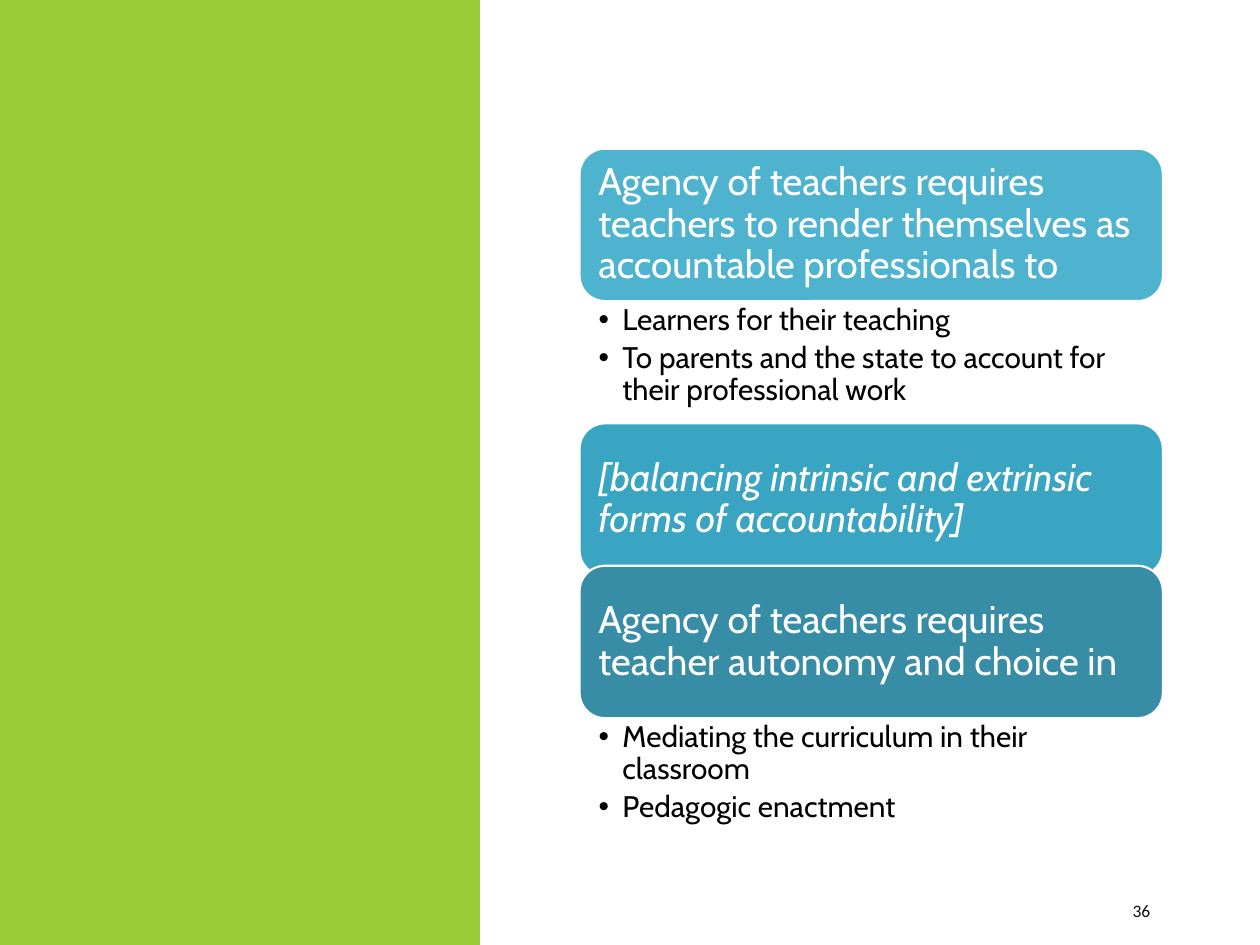
from lxml.etree import SubElement
from pptx import Presentation
from pptx.dml.color import RGBColor
from pptx.enum.shapes import MSO_SHAPE
from pptx.enum.text import MSO_ANCHOR, MSO_AUTO_SIZE, PP_ALIGN
from pptx.oxml.ns import qn
from pptx.util import Inches, Pt

GREEN = RGBColor(0x99, 0xCB, 0x38)
LIGHT_TEAL = RGBColor(0x4E, 0xB3, 0xCF)
TEAL = RGBColor(0x3A, 0xA4, 0xC3)
DARK_TEAL = RGBColor(0x37, 0x8D, 0xA6)
WHITE = RGBColor(0xFF, 0xFF, 0xFF)
BLACK = RGBColor(0, 0, 0)
NEAR_BLACK = RGBColor(0x0D, 0x0D, 0x0D)

SECTIONS = [
    {"top": 1.18, "fill": LIGHT_TEAL, "italic": None, "list_height": 0.82,
     "heading": "Agency of teachers requires teachers to render themselves as accountable professionals to",
     "points": ["Learners for their teaching",
                "To parents and the state to account for their professional work"]},
    {"top": 3.36, "fill": TEAL, "italic": True,
     "heading": "[balancing intrinsic and extrinsic forms of accountability]",
     "points": []},
    {"top": 4.49, "fill": DARK_TEAL, "italic": None, "list_height": 0.59,
     "heading": "Agency of teachers requires teacher autonomy and choice in",
     "points": ["Mediating the curriculum in their classroom", "Pedagogic enactment"]},
]
PAGE_NUMBER = "36"
LEFT, WIDTH, HEADING_HEIGHT = 4.6, 4.63, 1.21
INDENT = 0.19

HEADING_FRAME = {"word_wrap": True, "vertical_anchor": MSO_ANCHOR.MIDDLE,
                 "margin_left": Inches(0.09), "margin_right": Inches(0.09),
                 "margin_top": Inches(0.09), "margin_bottom": Inches(0.09)}
LIST_FRAME = {"word_wrap": True, "vertical_anchor": MSO_ANCHOR.TOP,
              "auto_size": MSO_AUTO_SIZE.NONE,
              "margin_left": Inches(0.15), "margin_right": Inches(0.17),
              "margin_top": Inches(0.03), "margin_bottom": Inches(0.03)}
NUMBER_FRAME = {"word_wrap": True, "vertical_anchor": MSO_ANCHOR.MIDDLE}
HEADING_PARA = {"alignment": PP_ALIGN.LEFT, "line_spacing": 0.9}
LIST_PARA = {"alignment": PP_ALIGN.LEFT, "line_spacing": 0.9,
             "space_before": Pt(0), "space_after": Pt(3.4)}
NUMBER_PARA = {"alignment": PP_ALIGN.LEFT}


def apply(target, values):
    for name, value in values.items():
        setattr(target, name, value)


def place(shape, left, top, width, height):
    apply(shape, {"left": Inches(left), "top": Inches(top),
                  "width": Inches(width), "height": Inches(height)})


def write(shape, lines, frame_format, para_format, font_format, color):
    frame = shape.text_frame
    apply(frame, frame_format)
    for index, line in enumerate(lines):
        para = frame.add_paragraph() if index else frame.paragraphs[0]
        apply(para, para_format)
        span = para.add_run()
        span.text = line
        apply(span.font, font_format)
        span.font.color.rgb = color


def add_bullets(shape):
    for para in shape.text_frame.paragraphs:
        properties = para._p.get_or_add_pPr()
        properties.set("marL", str(Inches(INDENT)))
        properties.set("indent", str(-Inches(INDENT)))
        SubElement(properties, qn("a:buChar")).set("char", "•")


def add_block(page, kind, box, fill):
    block = page.shapes.add_shape(kind, *map(Inches, box))
    block.shadow.inherit = False
    block.fill.solid()
    block.fill.fore_color.rgb = fill
    return block


def main():
    deck = Presentation()
    apply(deck, {"slide_width": Inches(10), "slide_height": Inches(7.5)})
    page = deck.slides.add_slide(deck.slide_layouts.get_by_name("Two Content"))
    title, *bodies = page.placeholders
    title.element.getparent().remove(title.element)

    panel = add_block(page, MSO_SHAPE.RECTANGLE, (0, 0, 3.81, 7.5), GREEN)
    panel.line.fill.background()

    number = page.shapes.add_textbox(Inches(8.89), Inches(7.08), Inches(0.8), Inches(0.3))
    write(number, [PAGE_NUMBER], NUMBER_FRAME, NUMBER_PARA,
          {"name": "Calibri", "size": Pt(10)}, NEAR_BLACK)

    free_bodies = iter(bodies)
    for section in SECTIONS:
        heading = add_block(page, MSO_SHAPE.ROUNDED_RECTANGLE,
                            (LEFT, section["top"], WIDTH, HEADING_HEIGHT), section["fill"])
        heading.line.color.rgb = WHITE
        heading.line.width = Pt(1.25)
        write(heading, [section["heading"]], HEADING_FRAME, HEADING_PARA,
              {"name": "Cabin", "size": Pt(22), "italic": section["italic"]}, WHITE)
        if section["points"]:
            body = next(free_bodies)
            place(body, LEFT, section["top"] + HEADING_HEIGHT, WIDTH, section["list_height"])
            write(body, section["points"], LIST_FRAME, LIST_PARA,
                  {"name": "Cabin", "size": Pt(17)}, BLACK)
            add_bullets(body)

    deck.save("out.pptx")


if __name__ == "__main__":
    main()
